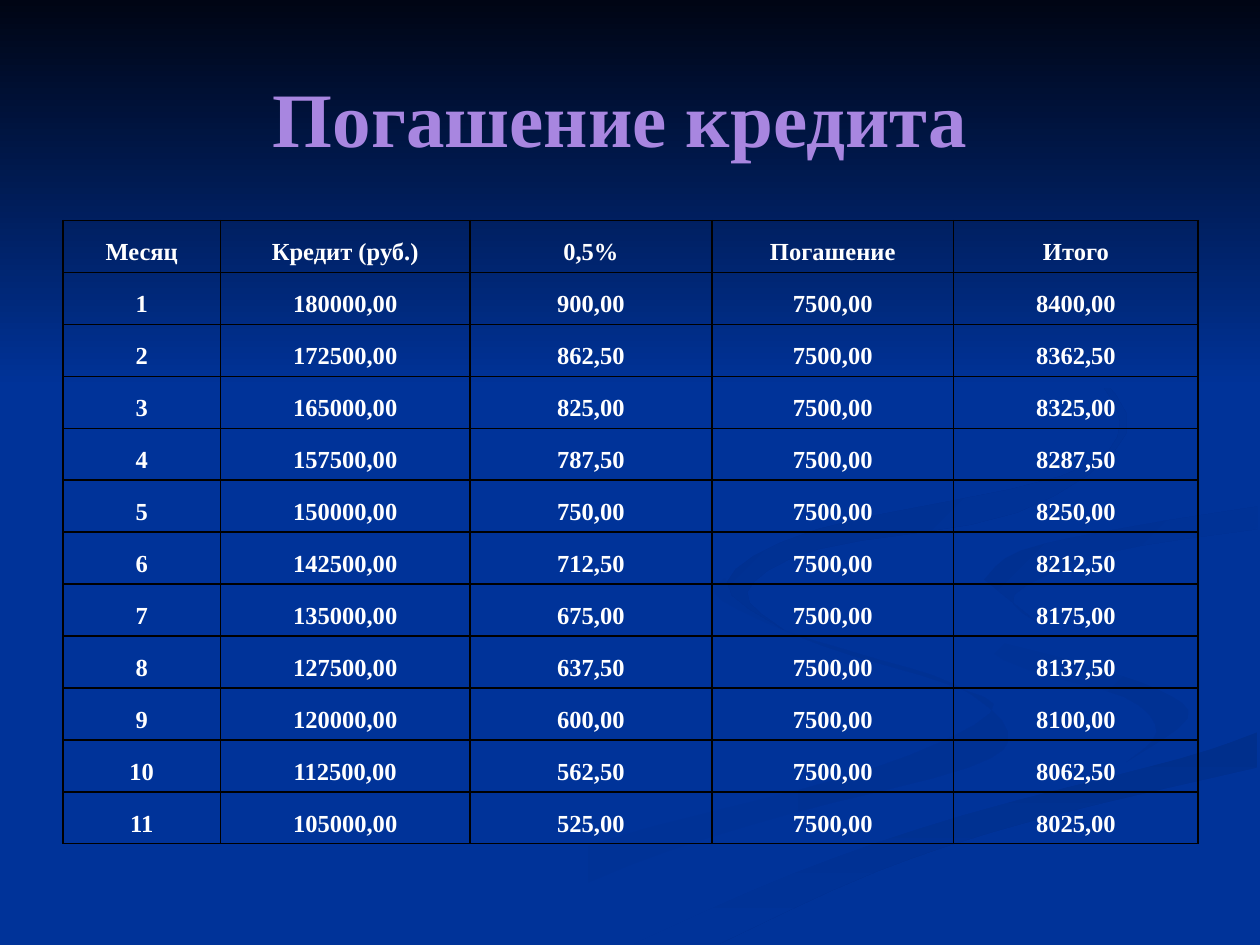
import lxml.etree
import pptx
import pptx.dml.color
import pptx.enum.text
import pptx.oxml.ns
import pptx.util

Inches, Pt = pptx.util.Inches, pptx.util.Pt
RGB = pptx.dml.color.RGBColor.from_string
qn = pptx.oxml.ns.qn
PP_ALIGN, MSO_ANCHOR = pptx.enum.text.PP_ALIGN, pptx.enum.text.MSO_ANCHOR

FONT = "Times New Roman"
COLORS = {
    "background": "003399", "top": "000514", "title": "A886E0",
    "text": "FFFFFF", "border": "000000",
    "shade1": "003193", "shade2": "002F8C", "shade3": "003091", "shade4": "002F8E",
}


def smooth(edge, steps=4):
    """Return points along a Catmull-Rom curve through the points of an edge."""
    padded = [edge[0], *edge, edge[-1]]
    curve = []
    for a, b, c, d in zip(padded, padded[1:], padded[2:], padded[3:]):
        for t in (k / steps for k in range(steps)):
            curve.append(tuple(
                b[n] + ((c[n] - a[n]) * t
                        + (2 * a[n] - 5 * b[n] + 4 * c[n] - d[n]) * t ** 2
                        + (3 * b[n] - a[n] - 3 * c[n] + d[n]) * t ** 3) / 2
                for n in (0, 1)))
    return curve + [edge[-1]]


def add_text(p, text, size, color):
    p.alignment = PP_ALIGN.CENTER
    r = p.add_run()
    r.text = text
    r.font.name = FONT
    r.font.size = Pt(size)
    r.font.bold = True
    r.font.color.rgb = RGB(COLORS[color])


prs = pptx.Presentation()
prs.slide_width, prs.slide_height = Inches(10), Inches(7.5)
s = prs.slides.add_slide(prs.slide_layouts[5])
s.background.fill.solid()
s.background.fill.fore_color.rgb = RGB(COLORS["background"])

# Edges shared by neighbouring ribbons
bend = [(7.24, 4.64), (7.58, 4.98), (8.5, 5.24), (9.19, 5.47), (9.43, 5.7), (8.94, 6.05)]
tail = [(5.03, 7.49), (6.3, 6.93), (7.64, 6.47), (9.36, 6.02), (9.98, 5.81)]
loop = [(7.81, 4.6), (8.1, 4.37), (8.98, 4.18), (9.98, 4.02)]

# Edges, gradient start, gradient end, clockwise angle; back to front
ribbons = [
    ([[(5.75, 4.59), (6.14, 4.96), (6.82, 5.19), (7.57, 5.43), (8, 5.81),
       (7.69, 6.09), (6.23, 6.47), (4.99, 6.87), (3.61, 7.49)],
      [(3, 7.49), (4.58, 6.74), (6.84, 6.13), (7.86, 5.66), (7.52, 5.43),
       (6.54, 5.13), (5.72, 4.76), (5.75, 4.59)]], "background", "shade1", 0),
    ([bend, [(8.94, 6.05), (9.18, 5.81), (8.92, 5.53), (7.97, 5.24), (7.24, 4.64)]],
     "background", "shade1", 45),
    ([tail, [(9.98, 6.09), (8.21, 6.51), (6.95, 6.92), (5.71, 7.49)]],
     "shade2", "background", 90),
    ([bend, [(8.94, 6.05), (7.43, 6.43), (6.19, 6.84), (4.77, 7.49)], tail,
      [(9.98, 5.38), (8.66, 5.09), (7.81, 4.6)], loop,
      [(9.98, 3.87), (8.74, 4.08), (7.55, 4.32), (7.24, 4.64)]],
     "background", "background", 0),
    ([loop, [(9.98, 4.2), (8.78, 4.39), (8.05, 4.72), (8.26, 4.96)]],
     "shade3", "background", 45),
    ([[(7.62, 2.33), (8.46, 2.79), (8.89, 3.35), (8.42, 3.78), (6.49, 4.2),
       (5.77, 4.62), (6.22, 5)],
      [(6.22, 5), (5.93, 4.7), (6.49, 4.36), (8.07, 4.07), (8.94, 3.44),
       (8.54, 2.83), (7.62, 2.33)]], "shade4", "background", 45),
    ([[(0, 0), (10, 0)], [(10, 3.08), (0, 3.08)]], "top", "background", 90),
]
for edges, start, end, angle in ribbons:
    points = [(Inches(x), Inches(y)) for edge in edges for x, y in smooth(edge)]
    builder = s.shapes.build_freeform(*points[0])
    builder.add_line_segments(points[1:], close=True)
    sp = builder.convert_to_shape()
    sp.shadow.inherit = False
    sp.line.fill.background()
    if start == end:
        sp.fill.solid()
        sp.fill.fore_color.rgb = RGB(COLORS[start])
        continue
    sp.fill.gradient()
    sp.fill.gradient_angle = -angle % 360
    for stop, color in zip(sp.fill.gradient_stops, (start, end)):
        stop.color.rgb = RGB(COLORS[color])

# Title, brought in front of the ribbons
title = s.shapes.title
title.element.getparent().append(title.element)
title.left, title.top, title.width, title.height = map(Inches, (0.5, 0.3, 9, 1.25))
title.text_frame.vertical_anchor = MSO_ANCHOR.MIDDLE
add_text(title.text_frame.paragraphs[0], "Погашение кредита ", 44, "title")

# Repayment schedule: equal principal plus 0.5% of the remaining credit
CREDIT, PAYMENT, RATE, MONTHS = 180000, 7500, 0.005, 11
rows = [["Месяц", "Кредит (руб.)", "0,5%", "Погашение", "Итого"]]
for month in range(MONTHS):
    rest = CREDIT - PAYMENT * month
    interest = rest * RATE
    amounts = (rest, interest, PAYMENT, PAYMENT + interest)
    rows.append([str(month + 1)] + [f"{a:.2f}".replace(".", ",") for a in amounts])

table = s.shapes.add_table(len(rows), len(rows[0]), Inches(0.5), Inches(1.75),
                           Inches(9), Inches(4.95)).table
table.first_row = table.horz_banding = False
for column, width in zip(table.columns, (1.25, 1.98, 1.92, 1.92, 1.94)):
    column.width = Inches(width)

for i, row in enumerate(rows):
    for j, text in enumerate(row):
        cell = table.cell(i, j)
        cell.vertical_anchor = MSO_ANCHOR.BOTTOM
        p = cell.text_frame.paragraphs[0]
        add_text(p, text, 14, "text")
        pPr = p._p.get_or_add_pPr()
        pPr.set("marL", str(Inches(0.38)))
        pPr.set("indent", str(-Inches(0.38)))
        tcPr = cell._tc.get_or_add_tcPr()
        for side in ("lnL", "lnR", "lnT", "lnB"):
            ln = lxml.etree.SubElement(tcPr, qn(f"a:{side}"), w=str(Pt(1)))
            fill = lxml.etree.SubElement(ln, qn("a:solidFill"))
            lxml.etree.SubElement(fill, qn("a:srgbClr"), val=COLORS["border"])
        cell.fill.background()

prs.save("out.pptx")
